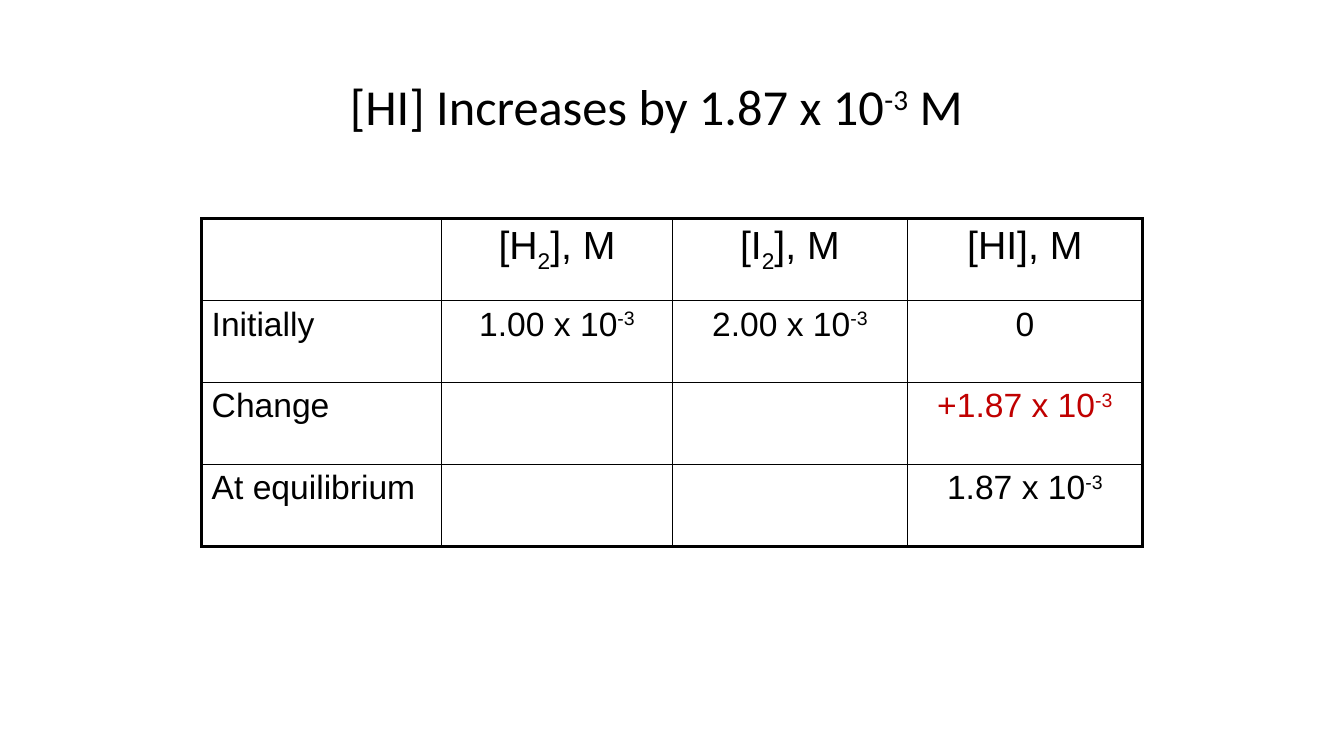
from lxml.etree import SubElement
from pptx import Presentation
from pptx.dml.color import RGBColor
from pptx.enum.text import PP_ALIGN as Align
from pptx.oxml.ns import qn
from pptx.util import Inches, Pt

BLACK = RGBColor(0x00, 0x00, 0x00)
RED = RGBColor(0xC0, 0x00, 0x00)
SUPERSCRIPT, SUBSCRIPT = 30, -25
THIN, THICK = 1, 2.25

COLUMN_WIDTHS = [2.38, 2.29, 2.33, 2.33]
CONCENTRATIONS = [
    ["", "[H|2|], M", "[I|2|], M", "[HI], M"],
    ["Initially", "1.00 x 10|-3", "2.00 x 10|-3", "0"],
    ["Change", "", "", "+1.87 x 10|-3"],
    ["At equilibrium", "", "", "1.87 x 10|-3"],
]


def write_formula(paragraph, formula, size, font, color=BLACK,
                  shift=SUPERSCRIPT, align=Align.CENTER):
    paragraph.alignment = align
    for position, piece in enumerate(formula.split("|")):
        run = paragraph.add_run()
        run.text = piece
        run.font.size = Pt(size)
        run.font.name = font
        run.font.color.rgb = color
        if position % 2:
            run.font._element.set("baseline", str(shift * 1000))


def draw_border(cell, side, weight):
    line = SubElement(cell._tc.get_or_add_tcPr(), qn(f"a:ln{side}"), w=str(Pt(weight)))
    fill = SubElement(line, qn("a:solidFill"))
    SubElement(fill, qn("a:srgbClr"), val=str(BLACK))


def add_title(slide, left, top, width, height):
    title = slide.shapes.add_textbox(
        Inches(left), Inches(top), Inches(width), Inches(height)).text_frame
    title.word_wrap = True
    write_formula(title.paragraphs[0], "[HI] Increases by 1.87 x 10|-3| M", 36, "Calibri")


def add_concentration_table(slide, left, top, width, height):
    last_row, last_column = len(CONCENTRATIONS) - 1, len(COLUMN_WIDTHS) - 1
    table = slide.shapes.add_table(
        last_row + 1, last_column + 1,
        Inches(left), Inches(top), Inches(width), Inches(height)).table
    table.first_row = table.horz_banding = False
    for column, column_width in zip(table.columns, COLUMN_WIDTHS):
        column.width = Inches(column_width)

    for r, formulas in enumerate(CONCENTRATIONS):
        for c, formula in enumerate(formulas):
            cell = table.cell(r, c)
            outer_edges = {"L": c == 0, "R": c == last_column,
                           "T": r == 0, "B": r == last_row}
            for side, is_outer in outer_edges.items():
                draw_border(cell, side, THICK if is_outer else THIN)
            cell.fill.background()
            if formula:
                write_formula(
                    cell.text_frame.paragraphs[0], formula,
                    size=28 if r == 0 else 24, font="Arial",
                    color=RED if formula.startswith("+") else BLACK,
                    shift=SUBSCRIPT if r == 0 else SUPERSCRIPT,
                    align=Align.LEFT if c == 0 else Align.CENTER)


def main():
    deck = Presentation()
    deck.slide_width, deck.slide_height = Inches(13.33), Inches(7.5)
    slide = deck.slides.add_slide(deck.slide_layouts[6])
    add_title(slide, 1.51, 0.7, 10, 1.25)
    add_concentration_table(slide, 2, 2.17, sum(COLUMN_WIDTHS), 3.25)
    deck.save("out.pptx")


if __name__ == "__main__":
    main()
